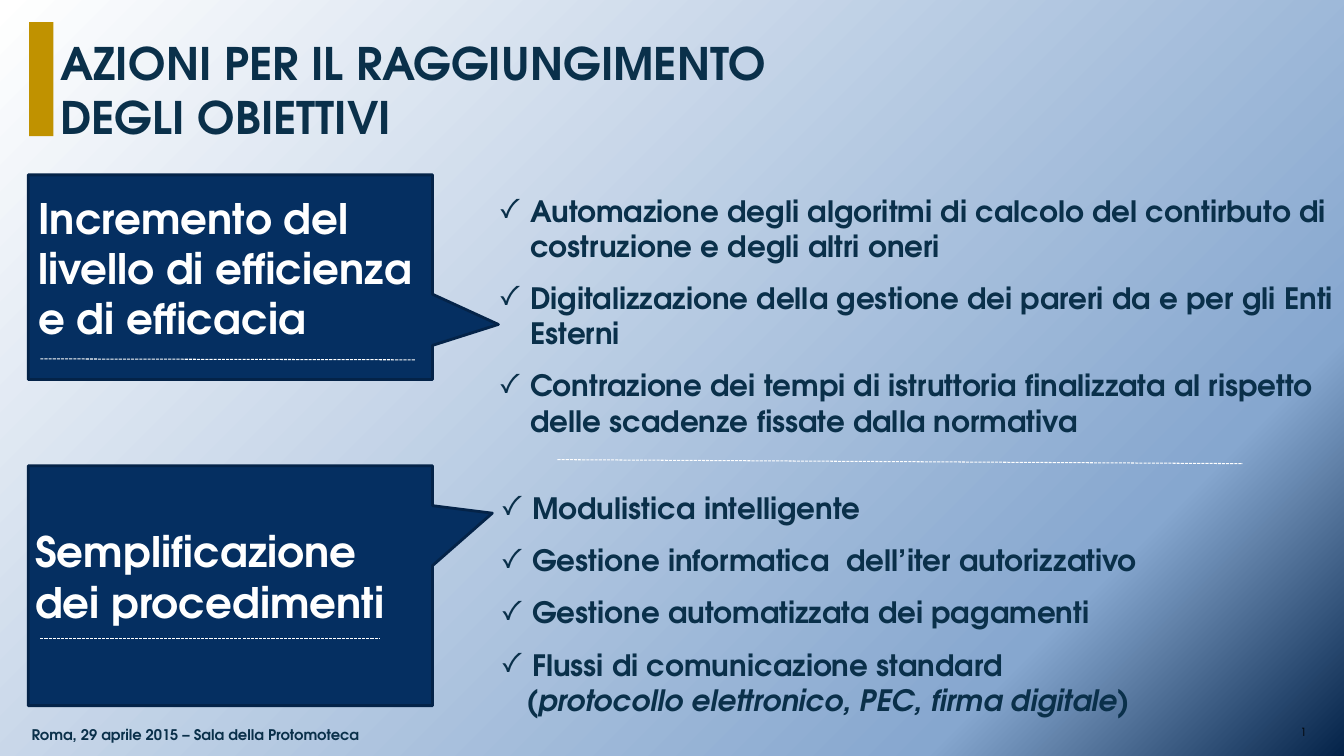
from copy import deepcopy
from dataclasses import dataclass
from typing import NamedTuple

from lxml.etree import SubElement
from pptx import Presentation
from pptx.dml.color import RGBColor
from pptx.enum.dml import MSO_LINE
from pptx.enum.shapes import MSO_CONNECTOR, MSO_SHAPE as Preset
from pptx.enum.text import MSO_ANCHOR as Anchor, PP_ALIGN as Align
from pptx.oxml.ns import qn
from pptx.shapes.autoshape import Shape
from pptx.slide import Slide
from pptx.util import Emu, Inches, Pt

SLIDE_WIDTH, SLIDE_HEIGHT = Inches(13.333), Inches(7.5)


@dataclass(frozen=True)
class Theme:
    font: str = "TeX Gyre Adventor"
    ink: str = "0A304A"
    black: str = "000000"
    white: str = "FFFFFF"
    navy: str = "052F61"
    navy_edge: str = "042348"
    gold: str = "C09200"
    background: tuple = ((0, "FFFFFF"), (0.8, "86A7CF"), (1, "042349"))
    title_size: float = 32
    heading_size: float = 30
    item_size: float = 21
    footer_size: float = 10.5
    number_size: float = 8
    spacing: float = 6


THEME = Theme()


class Area(NamedTuple):
    """A rectangle in percent of the slide's width and height."""
    left: float
    top: float
    width: float
    height: float


class Line(NamedTuple):
    """A segment in percent of the slide's width and height."""
    start_x: float
    start_y: float
    end_x: float
    end_y: float


class Item(NamedTuple):
    text: str
    bullet: bool = True
    before: float = THEME.spacing
    after: float = THEME.spacing


class Label(NamedTuple):
    area: Area
    items: tuple[Item, ...]
    size: float
    color: str = THEME.ink
    bold: bool = True
    align: Align = Align.LEFT
    anchor: Anchor = Anchor.MIDDLE
    insets: tuple[float, float, float, float] = (0.1, 0.05, 0.1, 0.05)


class Callout(NamedTuple):
    area: Area
    tip_x: float
    tip_y: float


CALLOUTS = (
    Callout(Area(2.1, 23.13, 30.08, 27.07), 0.663, 0.231),
    Callout(Area(2.1, 61.6, 30.08, 31.73), 0.648, -0.302),
)
DIVIDERS = (
    Line(41.48, 60.8, 92.48, 61.33),
    Line(3, 47.47, 30.9, 47.6),
    Line(3, 84.4, 28.2, 84.4),
)
GOLD_BAR = Area(2.18, 2.93, 1.8, 15.07)
FOOTER_INSETS = (0, 0.04, 0, 0)
CALLOUT_INSETS = (0.1, 0.05, 0.3, 0.05)
WIDE_LIST_INSETS = (0.1, 0.05, 0.02, 0.05)


def plain(text: str) -> tuple[Item, ...]:
    return (Item(text, bullet=False),)


LABELS = (
    Label(Area(3.75, 4.13, 63.23, 12.13),
          plain("AZIONI PER IL RAGGIUNGIMENTO DEGLI OBIETTIVI"),
          THEME.title_size, anchor=Anchor.TOP),
    Label(Area(2.1, 25.07, 31.95, 20.67),
          plain("Incremento del livello di efficienza e di efficacia"),
          THEME.heading_size, THEME.white, insets=CALLOUT_INSETS),
    Label(Area(1.88, 68, 27.75, 16.4),
          plain("Semplificazione dei procedimenti"),
          THEME.heading_size, THEME.white),
    Label(Area(36.38, 24.8, 63.6, 33.87), (
        Item("Automazione degli algoritmi di calcolo del contirbuto di "
             "costruzione e degli altri oneri"),
        Item("Digitalizzazione della gestione dei pareri da e per gli Enti Esterni"),
        Item("Contrazione dei tempi di istruttoria finalizzata al rispetto "
             "delle scadenze fissate dalla normativa"),
    ), THEME.item_size, insets=WIDE_LIST_INSETS),
    Label(Area(36.53, 64.13, 60.98, 31.47), (
        Item("Modulistica intelligente"),
        Item("Gestione informatica  dell’iter autorizzativo"),
        Item("Gestione automatizzata dei pagamenti"),
        Item("Flussi di comunicazione standard", after=0),
        Item("(protocollo elettronico, PEC, firma digitale)", False, 0, 0),
    ), THEME.item_size),
    Label(Area(2.1, 95.47, 24.9, 3.33),
          plain("Roma, 29 aprile 2015 – Sala della Protomoteca"),
          THEME.footer_size, align=Align.CENTER, anchor=Anchor.TOP,
          insets=FOOTER_INSETS),
    Label(Area(93.98, 95.47, 3.23, 3.33), plain("1"), THEME.number_size,
          THEME.black, False, Align.RIGHT, Anchor.TOP, FOOTER_INSETS),
)


def rgb(color: str) -> RGBColor:
    return RGBColor.from_string(color)


def to_emu(shares: Area | Line) -> list[Emu]:
    """Turn alternating width and height percentages into lengths."""
    sides = (SLIDE_WIDTH, SLIDE_HEIGHT) * 2
    return [Emu(round(side * share / 100)) for side, share in zip(sides, shares)]


def paint_background(slide: Slide) -> None:
    fill = slide.background.fill
    fill.gradient()
    fill.gradient_angle = 315
    stop_list = next(slide.background._cSld.iter(qn("a:gsLst")))
    stop_list.append(deepcopy(stop_list[-1]))
    for stop, (position, color) in zip(fill.gradient_stops, THEME.background):
        stop.position = position
        stop.color.rgb = rgb(color)


def add_filled(slide: Slide, preset: Preset, area: Area, color: str) -> Shape:
    shape = slide.shapes.add_shape(preset, *to_emu(area))
    shape.shadow.inherit = False
    shape.fill.solid()
    shape.fill.fore_color.rgb = rgb(color)
    shape.line.fill.background()
    return shape


def add_callout(slide: Slide, callout: Callout) -> None:
    shape = add_filled(slide, Preset.RECTANGULAR_CALLOUT, callout.area, THEME.navy)
    shape.adjustments[0], shape.adjustments[1] = callout.tip_x, callout.tip_y
    shape.line.color.rgb = rgb(THEME.navy_edge)
    shape.line.width = Pt(2)


def add_divider(slide: Slide, line: Line) -> None:
    connector = slide.shapes.add_connector(MSO_CONNECTOR.STRAIGHT, *to_emu(line))
    connector.line.color.rgb = rgb(THEME.white)
    connector.line.width = Pt(0.75)
    connector.line.dash_style = MSO_LINE.SQUARE_DOT
    SubElement(connector._element.spPr, qn("a:effectLst"))


def add_label(slide: Slide, label: Label) -> None:
    frame = slide.shapes.add_textbox(*to_emu(label.area)).text_frame
    frame.word_wrap = True
    frame.vertical_anchor = label.anchor
    (frame.margin_left, frame.margin_top,
     frame.margin_right, frame.margin_bottom) = map(Inches, label.insets)
    is_list = len(label.items) > 1
    for index, item in enumerate(label.items):
        paragraph = frame.add_paragraph() if index else frame.paragraphs[0]
        paragraph.text = item.text
        paragraph.alignment = label.align
        properties = paragraph._p.get_or_add_pPr()
        if item.bullet:
            properties.set("marL", str(Inches(0.31)))
            properties.set("indent", str(Inches(-0.31)))
            SubElement(properties, qn("a:buFont"), typeface=THEME.font)
            SubElement(properties, qn("a:buChar"), char="✓")
        elif is_list:
            properties.set("marL", str(Inches(0.25)))
        paragraph.space_before = Pt(item.before if index else 0)
        paragraph.space_after = Pt(item.after)
        font = paragraph.font
        font.name, font.size, font.bold = THEME.font, Pt(label.size), label.bold
        font.italic = is_list and not item.bullet
        font.color.rgb = rgb(label.color)


def main() -> None:
    presentation = Presentation()
    presentation.slide_width, presentation.slide_height = SLIDE_WIDTH, SLIDE_HEIGHT
    slide = presentation.slides.add_slide(presentation.slide_layouts[6])
    paint_background(slide)
    for callout in CALLOUTS:
        add_callout(slide, callout)
    for label in LABELS:
        add_label(slide, label)
    for line in DIVIDERS:
        add_divider(slide, line)
    add_filled(slide, Preset.RECTANGLE, GOLD_BAR, THEME.gold)
    presentation.save("out.pptx")


if __name__ == "__main__":
    main()
